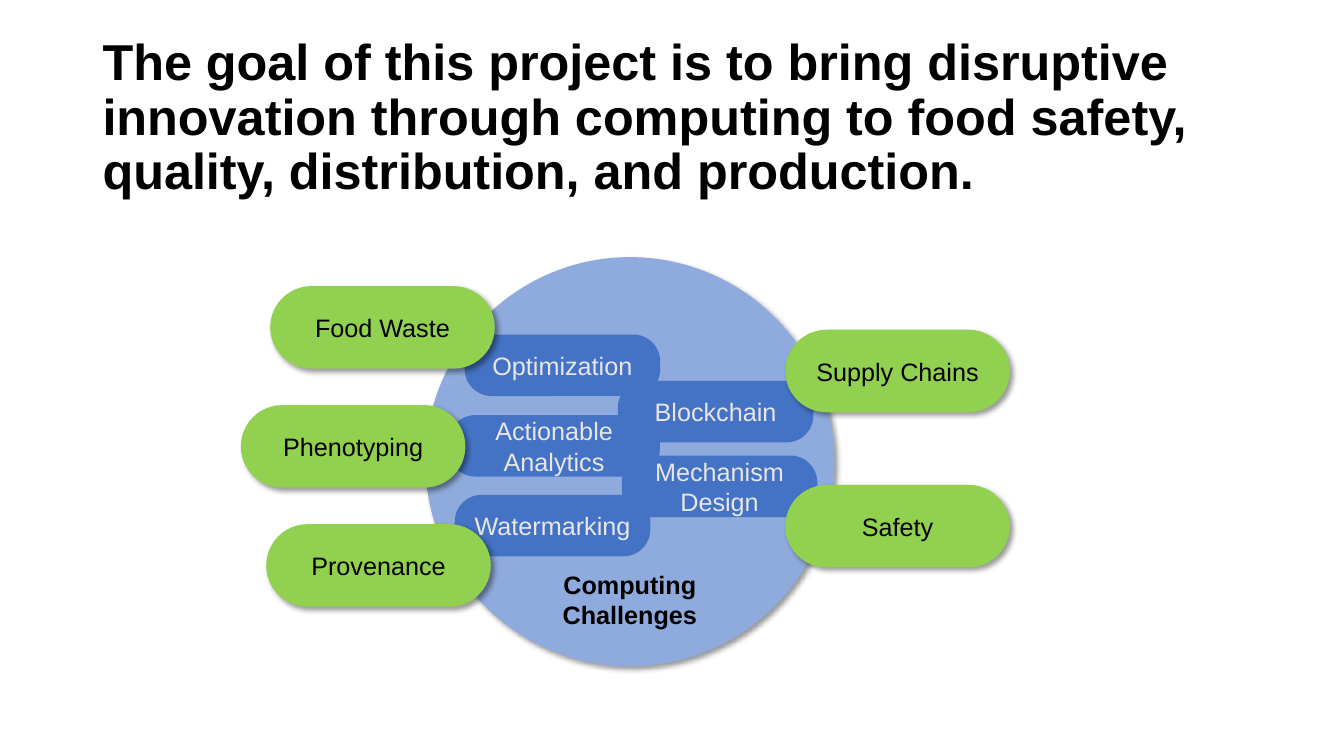
from dataclasses import dataclass

from lxml.etree import SubElement
from pptx import Presentation
from pptx.dml.color import RGBColor
from pptx.enum.shapes import MSO_SHAPE
from pptx.enum.text import MSO_ANCHOR, MSO_AUTO_SIZE, PP_ALIGN
from pptx.oxml.ns import qn
from pptx.shapes.autoshape import Shape
from pptx.shapes.shapetree import GroupShapes
from pptx.text.text import TextFrame
from pptx.util import Cm, Pt

COLORS = {
    "text": "000000",
    "circle": "8FAADC",
    "method": "4472C4",
    "method_text": "E7E6E6",
    "area": "92D050",
}
FONT = "Arial"


@dataclass(frozen=True)
class Style:
    fill: str
    text: str
    height: float
    rounding: float
    shadow: bool


@dataclass(frozen=True)
class Box:
    label: str
    left: float
    top: float
    width: float
    style: Style


METHOD = Style("method", "method_text", 1.55, 0.439, False)
AREA = Style("area", "text", 2.08, 0.5, True)
METHOD_W, AREA_W = 4.93, 5.66

# Lengths in cm, listed from back to front
BOXES = [
    Box("Optimization", 11.71, 8.43, METHOD_W, METHOD),
    Box("Mechanism Design", 15.67, 11.48, METHOD_W, METHOD),
    Box("Blockchain", 15.57, 9.6, METHOD_W, METHOD),
    Box("Watermarking", 11.46, 12.47, METHOD_W, METHOD),
    Box("Actionable Analytics", 11.3, 10.46, 5.33, METHOD),
    Box("Food Waste", 6.81, 7.21, AREA_W, AREA),
    Box("Phenotyping", 6.07, 10.21, AREA_W, AREA),
    Box("Provenance", 6.71, 13.21, AREA_W, AREA),
    Box("Supply Chains", 19.79, 8.31, AREA_W, AREA),
    Box("Safety", 19.79, 12.22, AREA_W, AREA),
]


def write(tf: TextFrame, text: str, color: str, size: int = 18,
          bold: bool = False, align: PP_ALIGN = PP_ALIGN.CENTER,
          anchor: MSO_ANCHOR = MSO_ANCHOR.MIDDLE) -> None:
    tf.word_wrap = True
    tf.auto_size = MSO_AUTO_SIZE.NONE
    tf.vertical_anchor = anchor
    p = tf.paragraphs[0]
    p.alignment = align
    r = p.add_run()
    r.text = text
    r.font.name = FONT
    r.font.size = Pt(size)
    r.font.bold = bold
    r.font.color.rgb = RGBColor.from_string(COLORS[color])


def add_shadow(sp: Shape) -> None:
    effects = sp._element.spPr.find(qn("a:effectLst"))
    outer = SubElement(effects, qn("a:outerShdw"), blurRad=str(Pt(4)),
                       dist=str(Pt(3)), dir=str(45 * 60000),
                       algn="tl", rotWithShape="0")
    color = SubElement(outer, qn("a:srgbClr"), val=COLORS["text"])
    SubElement(color, qn("a:alpha"), val="40000")


def add_filled(shapes: GroupShapes, kind: MSO_SHAPE, left: float, top: float,
               width: float, height: float, fill: str, shadow: bool) -> Shape:
    sp = shapes.add_shape(kind, Cm(left), Cm(top), Cm(width), Cm(height))
    sp.fill.solid()
    sp.fill.fore_color.rgb = RGBColor.from_string(COLORS[fill])
    sp.line.fill.background()
    sp.shadow.inherit = False
    if shadow:
        add_shadow(sp)
    return sp


def add_box(shapes: GroupShapes, box: Box) -> None:
    st = box.style
    sp = add_filled(shapes, MSO_SHAPE.ROUNDED_RECTANGLE, box.left, box.top,
                    box.width, st.height, st.fill, st.shadow)
    sp.adjustments[0] = st.rounding
    write(sp.text_frame, box.label, st.text)


def main() -> None:
    prs = Presentation()
    prs.slide_width, prs.slide_height = Cm(33.87), Cm(19.05)
    s = prs.slides.add_slide(prs.slide_layouts[5])

    # Title
    title = s.shapes.title
    title.left, title.top = Cm(2.33), Cm(0.81)
    title.width, title.height = Cm(29.21), Cm(5)
    write(title.text_frame,
          "The goal of this project is to bring disruptive innovation through "
          "computing to food safety, quality, distribution, and production.",
          "text", 36, True, PP_ALIGN.LEFT, MSO_ANCHOR.TOP)
    p = title.text_frame.paragraphs[0]
    p.line_spacing = 0.9
    p.space_before = Pt(10)

    # Circle with its caption
    diagram = s.shapes.add_group_shape().shapes
    add_filled(diagram, MSO_SHAPE.OVAL, 10.72, 6.48, 10.31, 10.31, "circle", True)
    caption = diagram.add_textbox(Cm(13.2), Cm(14.2), Cm(5.35), Cm(1.8))
    write(caption.text_frame, "Computing Challenges", "text", bold=True)

    # Computing methods and food areas
    for box in BOXES:
        add_box(diagram, box)

    prs.save("out.pptx")


if __name__ == "__main__":
    main()
